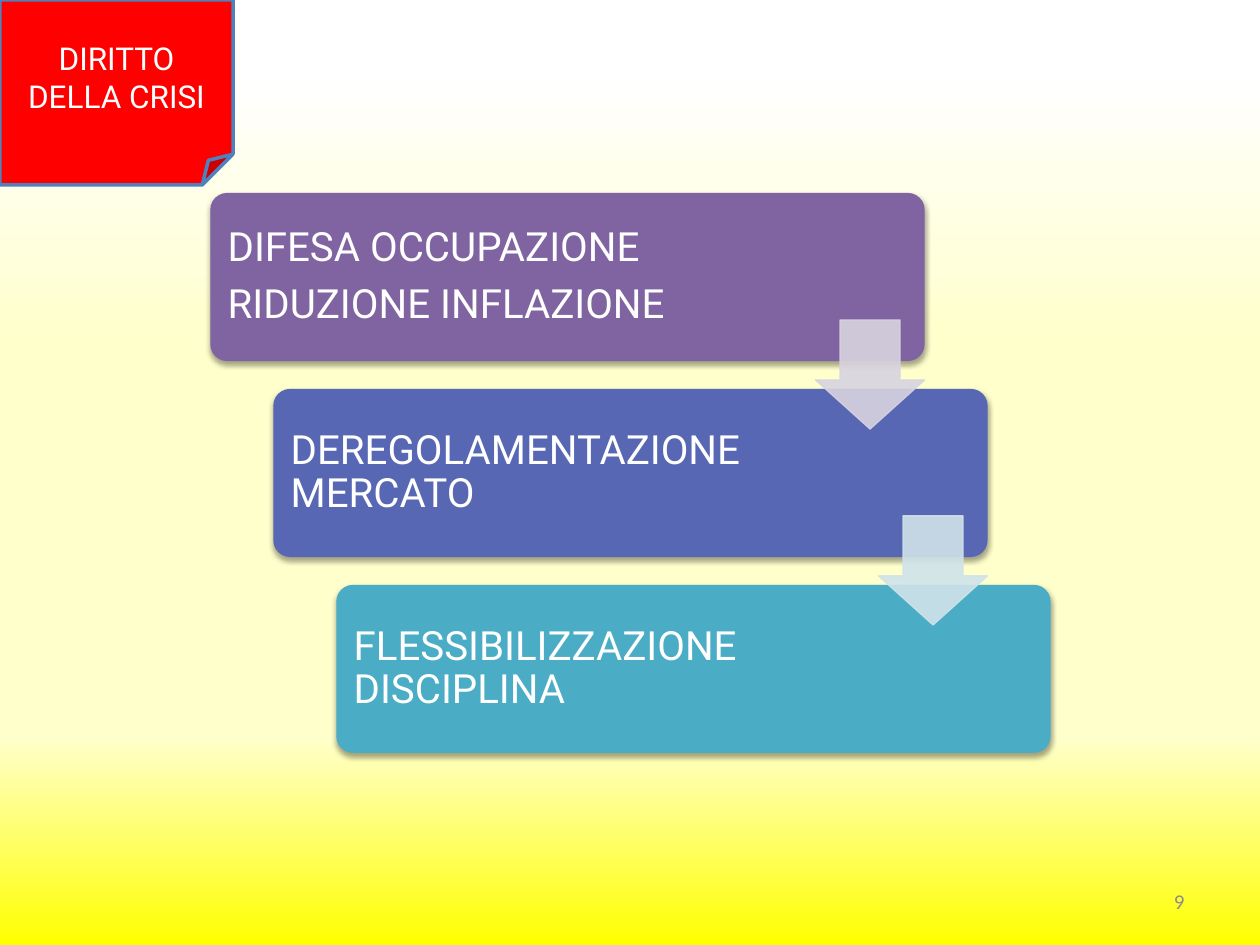
import pptx
import pptx.util
import pptx.dml.color
import pptx.enum.shapes
import pptx.enum.text
import pptx.oxml
import pptx.oxml.ns

Cm, Pt = pptx.util.Cm, pptx.util.Pt
RGB = pptx.dml.color.RGBColor
SHAPE = pptx.enum.shapes.MSO_SHAPE
ALIGN = pptx.enum.text.PP_ALIGN
MIDDLE = pptx.enum.text.MSO_ANCHOR.MIDDLE
qn = pptx.oxml.ns.qn
NS = pptx.oxml.ns.nsdecls("a")

WHITE = RGB(0xFF, 0xFF, 0xFF)
CREAM = RGB(0xFF, 0xFF, 0xCC)
YELLOW = RGB(0xFF, 0xFF, 0x00)
RED = RGB(0xFF, 0x00, 0x00)
BLUE = RGB(0x4F, 0x81, 0xBD)
GREY = RGB(0x8C, 0x8C, 0x8C)
PURPLE = RGB(0x80, 0x64, 0xA2)
INDIGO = RGB(0x57, 0x67, 0xB4)
TEAL = RGB(0x4B, 0xAC, 0xC6)
PALE_PURPLE = RGB(0xD8, 0xD3, 0xE0)
PALE_TEAL = RGB(0xD0, 0xE3, 0xEA)

BACKGROUND_STOPS = [(8, WHITE), (36, CREAM), (78, CREAM), (100, YELLOW)]

# Staircase: text paragraphs, box colour, colour of the arrow to the next step
STEPS = [
    (["DIFESA OCCUPAZIONE", "RIDUZIONE INFLAZIONE"], PURPLE, PALE_PURPLE),
    (["DEREGOLAMENTAZIONE MERCATO"], INDIGO, PALE_TEAL),
    (["FLESSIBILIZZAZIONE DISCIPLINA"], TEAL, None),
]
LEFT, TOP = 4.24, 3.89
STEP_X, STEP_Y = 1.27, 3.95
BOX_W, BOX_H = 14.4, 3.39
TEXT_W, PAD = 10.73, 0.1
ARROW, ARROW_DROP = 2.2, 2.56


def set_background(s):
    fill = s.background.fill
    fill.gradient()
    fill.gradient_angle = 270
    stops = s.background._cSld.find(".//" + qn("a:gsLst"))
    stops.clear()
    for pos, color in BACKGROUND_STOPS:
        stops.append(pptx.oxml.parse_xml(
            f'<a:gs {NS} pos="{pos * 1000}"><a:srgbClr val="{color}"/></a:gs>'))


def add_run(p, text, size, color, font="Roboto"):
    r = p.add_run()
    r.text = text
    r.font.size = Pt(size)
    r.font.name = font
    r.font.color.rgb = color


def add_shape(s, kind, x, y, w, h, color):
    sp = s.shapes.add_shape(kind, Cm(x), Cm(y), Cm(w), Cm(h))
    sp.shadow.inherit = False
    sp.fill.solid()
    sp.fill.fore_color.rgb = color
    sp.line.fill.background()
    return sp


def add_text_frame(s, x, y, w, h):
    tf = s.shapes.add_textbox(Cm(x), Cm(y), Cm(w), Cm(h)).text_frame
    tf.word_wrap = True
    tf.vertical_anchor = MIDDLE
    return tf


def add_note(s):
    sp = add_shape(s, SHAPE.FOLDED_CORNER, 0, 0, 4.7, 3.73, RED)
    sp.line.color.rgb = BLUE
    sp.line.width = Pt(2)
    tf = sp.text_frame
    tf.vertical_anchor = MIDDLE
    p = tf.paragraphs[0]
    p.alignment = ALIGN.CENTER
    add_run(p, "DIRITTO DELLA CRISI", 18, WHITE)


def add_box(s, x, y, lines, color):
    sp = add_shape(s, SHAPE.ROUNDED_RECTANGLE, x, y, BOX_W, BOX_H, color)
    sp.adjustments[0] = 0.1
    effects = sp._element.spPr.find(qn("a:effectLst"))
    effects.append(pptx.oxml.parse_xml(
        f'<a:outerShdw {NS} blurRad="{Pt(3.1)}" dist="{Pt(1.8)}" dir="5400000" '
        'rotWithShape="0"><a:srgbClr val="000000"><a:alpha val="35000"/>'
        '</a:srgbClr></a:outerShdw>'))

    tf = add_text_frame(s, x + PAD, y + PAD, TEXT_W, BOX_H - 2 * PAD)
    tf.margin_left = tf.margin_right = tf.margin_top = tf.margin_bottom = Cm(0.25)
    for i, line in enumerate(lines):
        p = tf.add_paragraph() if i else tf.paragraphs[0]
        p.line_spacing = 0.9
        p.space_after = Pt(8)
        add_run(p, line, 23, WHITE)


def add_arrow(s, x, y, color):
    sp = add_shape(s, SHAPE.DOWN_ARROW, x, y, ARROW, ARROW, color)
    sp.adjustments[0] = 0.55
    sp.adjustments[1] = 0.45
    sp.line.color.rgb = color
    sp.line.width = Pt(0.75)
    # Fill and line are 90% opaque
    for clr in sp._element.spPr.iter(qn("a:srgbClr")):
        clr.append(pptx.oxml.parse_xml(f'<a:alpha {NS} val="90000"/>'))


def add_page_number(s):
    p = add_text_frame(s, 18.21, 17.65, 5.92, 1.02).paragraphs[0]
    p.alignment = ALIGN.RIGHT
    add_run(p, "9", 12, GREY, "Calibri")


def main():
    prs = pptx.Presentation()
    prs.slide_width, prs.slide_height = Cm(25.4), Cm(19.05)
    s = prs.slides.add_slide(prs.slide_layouts[6])
    set_background(s)
    add_note(s)
    add_page_number(s)

    # Boxes first, so that the arrows lie over them
    for i, (lines, color, _) in enumerate(STEPS):
        add_box(s, LEFT + i * STEP_X, TOP + i * STEP_Y, lines, color)
    for i, (_, _, color) in enumerate(STEPS[:-1]):
        right = LEFT + i * STEP_X + BOX_W
        add_arrow(s, right - ARROW, TOP + i * STEP_Y + ARROW_DROP, color)

    prs.save("out.pptx")


if __name__ == "__main__":
    main()
